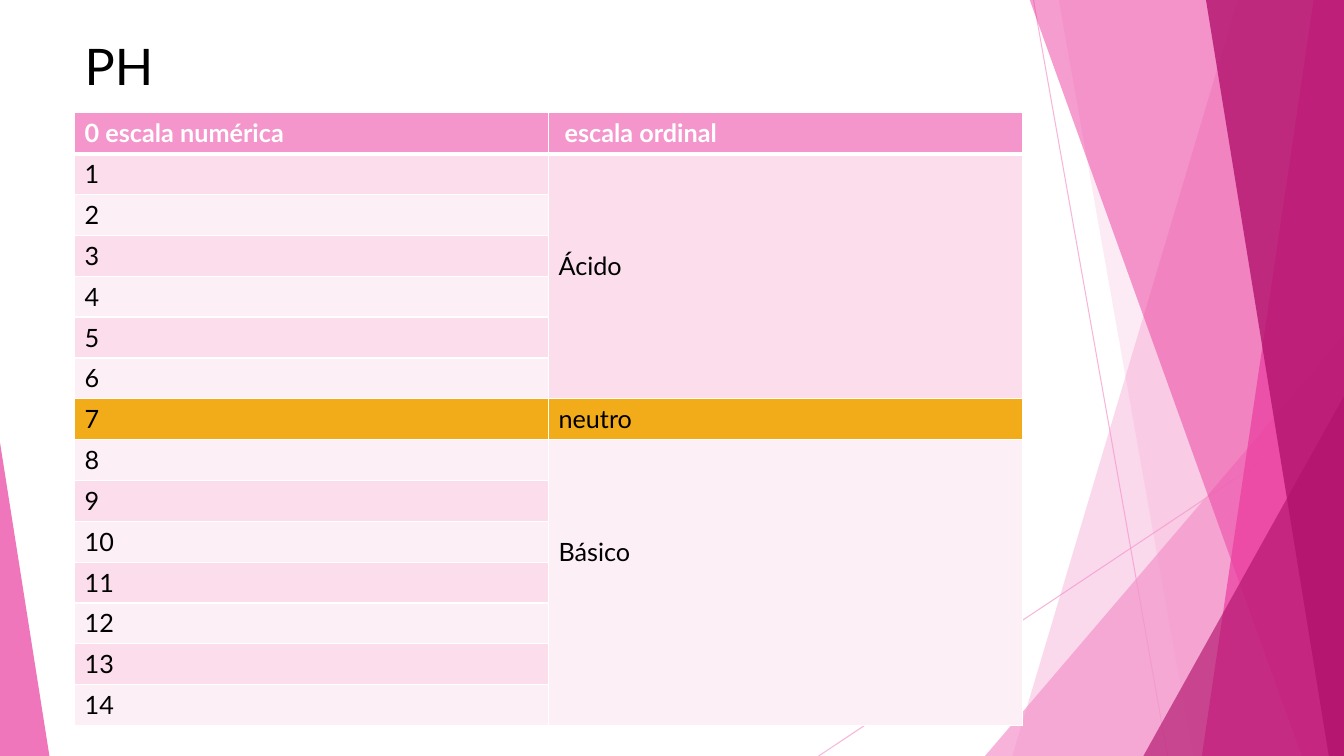
from lxml.etree import SubElement
from pptx import Presentation
from pptx.dml.color import RGBColor
from pptx.enum.shapes import MSO_CONNECTOR, MSO_SHAPE
from pptx.enum.text import MSO_ANCHOR, MSO_AUTO_SIZE, PP_ALIGN
from pptx.oxml.ns import qn
from pptx.util import Emu, Pt

SCALE = 9144  # EMU in one px, 100 px to the inch
WIDTH, HEIGHT = 1333, 750
FONT = "Lato"
PINK, ROSE, PLUM = "F496CB", "EB3D9F", "B2136D"
WHITE, BLACK, AMBER = "FFFFFF", "000000", "F2AC19"
BANDS = ["FDEFF6", "FBDDEC"]


def px(length):
    return Emu(length * SCALE)


def color(hex_text):
    return RGBColor.from_string(hex_text)


def set_fill(fill, hex_text, opacity=100):
    fill.solid()
    fill.fore_color.rgb = color(hex_text)
    if opacity < 100:
        tint = fill._xPr.find(".//" + qn("a:srgbClr"))
        SubElement(tint, qn("a:alpha"), val=str(opacity * 1000))


def write_text(frame, text, size=18, hex_text=BLACK, bold=False):
    para = frame.paragraphs[0]
    para.alignment = PP_ALIGN.LEFT
    span = para.add_run()
    span.text = text
    span.font.name = FONT
    span.font.size = Pt(size)
    span.font.bold = bold
    span.font.color.rgb = color(hex_text)


def finish_facet(shape, hex_text, opacity):
    shape.shadow.inherit = False
    shape.line.fill.background()
    set_fill(shape.fill, hex_text, opacity)


def add_ray(page, start, end):
    ray = page.shapes.add_connector(
        MSO_CONNECTOR.STRAIGHT, *(px(value) for value in start + end))
    ray.line.width = Pt(0.75)
    set_fill(ray.line.fill, PINK, 70)
    SubElement(ray._element.spPr, qn("a:effectLst"))


def add_facet(page, top_left, bottom_left, right, bottom, hex_text, opacity):
    """Sheet with a slanted left edge that reaches the right side."""
    builder = page.shapes.build_freeform(top_left, -1, scale=SCALE)
    builder.add_line_segments([(right, -1), (right, bottom), (bottom_left, bottom)])
    finish_facet(builder.convert_to_shape(), hex_text, opacity)


def add_corner(page, box, apex, hex_text, opacity):
    corner = page.shapes.add_shape(
        MSO_SHAPE.ISOSCELES_TRIANGLE, *(px(value) for value in box))
    corner.adjustments[0] = apex
    finish_facet(corner, hex_text, opacity)


def add_backdrop(page, box):
    left, top, width, height = box
    right, bottom = left + width, top + height
    add_ray(page, (1025, top), (1158, bottom))
    add_ray(page, (right, 403), (812, bottom))
    add_facet(page, 1228, 1004, right, bottom, PINK, 36)
    add_facet(page, 1050, 1183, right, bottom, PINK, 20)
    add_corner(page, (right - 356, bottom - 417, 356, 417), 1, PINK, 72)
    add_facet(page, 1021, 1291, right, bottom, ROSE, 50)
    add_facet(page, 1303, 1192, right, bottom, ROSE, 70)
    add_facet(page, 1196, 1318, right, bottom, PLUM, 80)
    add_corner(page, (right - 199, bottom - 357, 199, 357), 1, PLUM, 66)
    add_corner(page, (left, bottom - 311, 49, 311), 0, ROSE, 70)


def add_title(page, box, text):
    title = page.shapes.title
    title.left, title.top, title.width, title.height = (px(value) for value in box)
    frame = title.text_frame
    frame.auto_size = MSO_AUTO_SIZE.NONE
    frame.vertical_anchor = MSO_ANCHOR.TOP
    write_text(frame, text, size=36)
    page.shapes._spTree.append(title._element)  # in front of the backdrop


def style_cell(cell, hex_text, top_width=1, bottom_width=1):
    properties = cell._tc.get_or_add_tcPr()
    widths = {"lnL": 1, "lnR": 1, "lnT": top_width, "lnB": bottom_width}
    for side, width in widths.items():
        edge = SubElement(properties, qn("a:" + side), w=str(Pt(width)))
        paint = SubElement(edge, qn("a:solidFill"))
        SubElement(paint, qn("a:srgbClr"), val=WHITE)
    set_fill(cell.fill, hex_text)


def add_scale_table(page, box, headings, last, neutral, groups):
    left, top, width, height = (px(value) for value in box)
    table = page.shapes.add_table(last + 1, 2, left, top, width, height).table
    for row in table.rows:
        row.height = Emu(height // (last + 1))

    # Heading row
    for column, heading in enumerate(headings):
        cell = table.cell(0, column)
        style_cell(cell, PINK, bottom_width=3)
        write_text(cell.text_frame, heading, hex_text=WHITE, bold=True)

    # Numeric scale
    for number in range(1, last + 1):
        shade = AMBER if number == neutral else BANDS[number % 2]
        for column in range(2):
            style_cell(table.cell(number, column), shade,
                       top_width=3 if number == 1 else 1)
        write_text(table.cell(number, 0).text_frame, str(number))

    # Ordinal scale, each name starting at a margin below the top of its cell
    for name, first, final, margin in groups:
        cell = table.cell(first, 1)
        if final > first:
            cell.merge(table.cell(final, 1))
        cell.margin_top = px(margin)
        write_text(cell.text_frame, name)


def build_scale_page(deck):
    page = deck.slides.add_slide(deck.slide_layouts[5])
    add_backdrop(page, (0, 0, WIDTH, HEIGHT))
    add_title(page, (74, 30, 940, 127), "PH")
    add_scale_table(
        page, (74, 112, 940, 608), ["0 escala numérica", " escala ordinal"],
        last=14, neutral=7,
        groups=[("Ácido", 1, 6, 96), ("neutro", 7, 7, 5), ("Básico", 8, 14, 96)])


def main():
    deck = Presentation()
    deck.slide_width, deck.slide_height = px(WIDTH), px(HEIGHT)
    build_scale_page(deck)
    deck.save("out.pptx")


if __name__ == "__main__":
    main()
